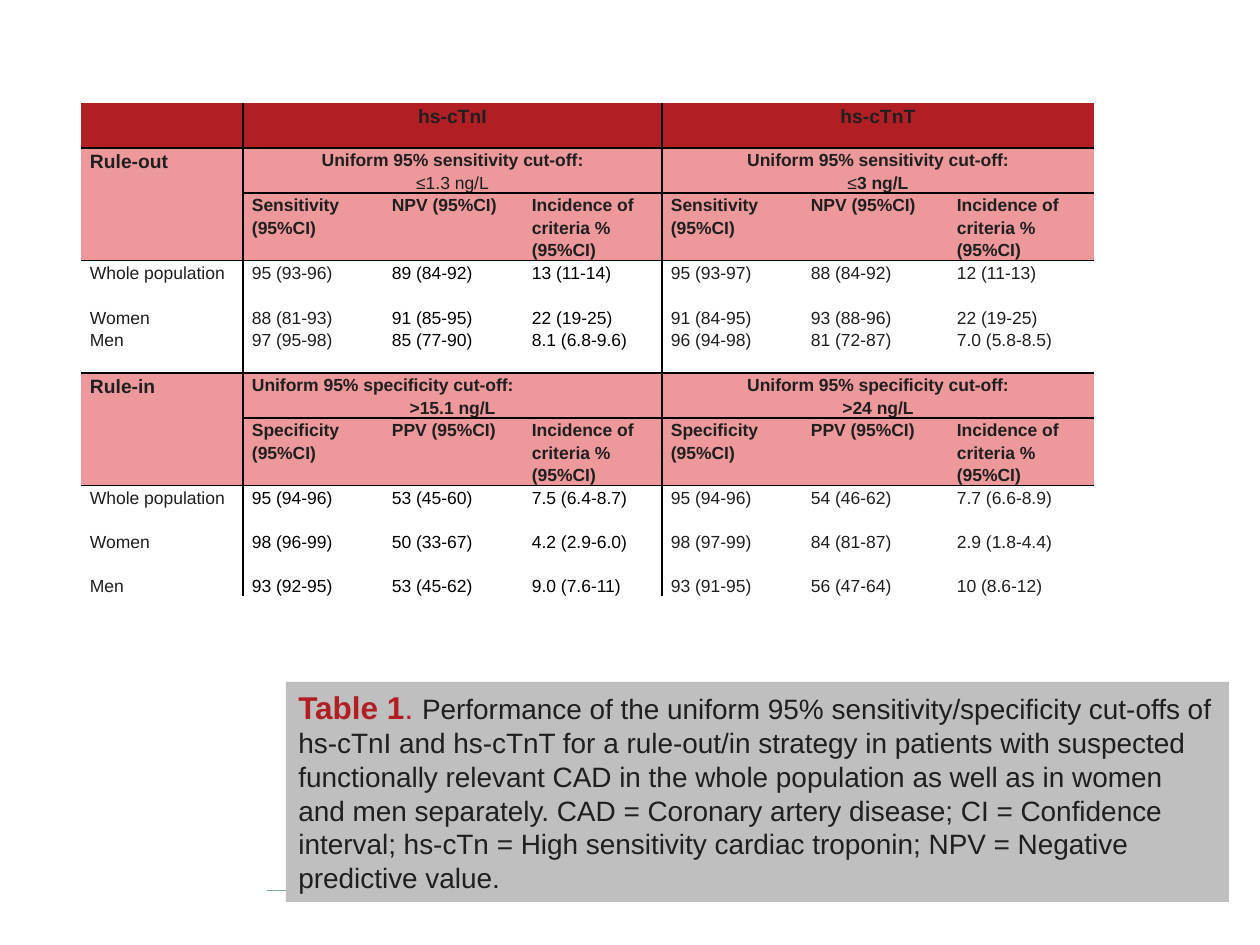
import pptx
import pptx.util
import pptx.dml.color
import pptx.enum.shapes
import pptx.enum.text
import pptx.oxml
import pptx.oxml.ns

PX = 914400 / 126
FONT = "Arial"
COLORS = {"red": "B11F24", "pink": "ED989B", "gray": "BFBFBF", "teal": "81ADA8",
          "ink": "1F1F1F", "black": "000000"}
COLS = [162, 140, 140, 139, 140, 146, 146]
ROWS = [45, 45, 67, 45, 22, 45, 45, 67, 44, 44, 23]
HEADER_ROWS = (1, 2, 6, 7)
RULED_TOPS = (1, 2, 3, 6, 7, 8)
GROUP_STARTS = (1, 4)
LEFT = pptx.enum.text.PP_ALIGN.LEFT
CENTER = pptx.enum.text.PP_ALIGN.CENTER

BLOCKS = [
    {"row": 1, "name": "Rule-out", "measure": "Sensitivity", "value": "NPV", "black": (2, 3),
     "cutoffs": [
         [("Uniform 95% sensitivity cut-off:", CENTER, True), ("≤1.3 ng/L", CENTER, False)],
         [("Uniform 95% sensitivity cut-off:", CENTER, True), ("≤|3 ng/L", CENTER, True)]],
     "rows": [
         ["Whole population", "95 (93-96)", "89 (84-92)", "13 (11-14)", "95 (93-97)", "88 (84-92)", "12 (11-13)"],
         ["Women", "88 (81-93)", "91 (85-95)", "22 (19-25)", "91 (84-95)", "93 (88-96)", "22 (19-25)"],
         ["Men", "97 (95-98)", "85 (77-90)", "8.1 (6.8-9.6)", "96 (94-98)", "81 (72-87)", "7.0 (5.8-8.5)"]]},
    {"row": 6, "name": "Rule-in", "measure": "Specificity", "value": "PPV", "black": (1, 2, 3),
     "cutoffs": [
         [("Uniform 95% specificity cut-off:", LEFT, True), (">15.1 ng/L", CENTER, True)],
         [("Uniform 95% specificity cut-off:", CENTER, True), (">24 ng/L", CENTER, True)]],
     "rows": [
         ["Whole population", "95 (94-96)", "53 (45-60)", "7.5 (6.4-8.7)", "95 (94-96)", "54 (46-62)", "7.7 (6.6-8.9)"],
         ["Women", "98 (96-99)", "50 (33-67)", "4.2 (2.9-6.0)", "98 (97-99)", "84 (81-87)", "2.9 (1.8-4.4)"],
         ["Men", "93 (92-95)", "53 (45-62)", "9.0 (7.6-11)", "93 (91-95)", "56 (47-64)", "10 (8.6-12)"]]},
]
CAPTION = ("Performance of the uniform 95% sensitivity/specificity cut-offs of hs-cTnI and hs-cTnT "
           "for a rule-out/in strategy in patients with suspected functionally relevant CAD in the "
           "whole population as well as in women and men separately. CAD = Coronary artery disease; "
           "CI = Confidence interval; hs-cTn = High sensitivity cardiac troponin; "
           "NPV = Negative predictive value.")


def px(n):
    return pptx.util.Emu(round(n * PX))


def rgb(name):
    return pptx.dml.color.RGBColor.from_string(COLORS[name])


def add_text(p, text, size=10, color="ink", bold=False):
    r = p.add_run()
    r.text = text
    r.font.name = FONT
    r.font.size = pptx.util.Pt(size)
    r.font.bold = bold
    r.font.color.rgb = rgb(color)


def write_cell(cell, lines, **fmt):
    tf = cell.text_frame
    for i, (text, align, bold) in enumerate(lines):
        p = tf.paragraphs[0] if i == 0 else tf.add_paragraph()
        p.alignment = align
        p.line_spacing = 1.15
        parts = text.split("|")
        for part in parts[:-1]:
            add_text(p, part, **fmt)
        add_text(p, parts[-1], bold=bold, **fmt)


def set_borders(cell, edges):
    tc_pr = cell._tc.get_or_add_tcPr()
    for i, edge in enumerate("LRTB"):
        paint = (f'<a:solidFill><a:srgbClr val="{COLORS["black"]}"/></a:solidFill>'
                 if edge in edges else "<a:noFill/>")
        tc_pr.insert(i, pptx.oxml.parse_xml(
            f'<a:ln{edge} {pptx.oxml.ns.nsdecls("a")} w="12700">{paint}</a:ln{edge}>'))


def cell_edges(row, col):
    def ruled(r):
        return r in RULED_TOPS and not (col == 0 and r in (2, 7))

    tests = {"L": col in GROUP_STARTS, "R": col + 1 in GROUP_STARTS,
             "T": ruled(row), "B": ruled(row + 1)}
    return [edge for edge, on in tests.items() if on]


def format_cell(cell, row, col):
    cell.margin_left = cell.margin_right = px(9)
    cell.margin_top = cell.margin_bottom = 0
    if row == 0 or row in HEADER_ROWS:
        cell.fill.solid()
        cell.fill.fore_color.rgb = rgb("red" if row == 0 else "pink")
    else:
        cell.fill.background()
    set_borders(cell, cell_edges(row, col))


def fill_block(table, block):
    top = block["row"]
    table.cell(top, 0).merge(table.cell(top + 1, 0))
    write_cell(table.cell(top, 0), [(block["name"], LEFT, True)], size=11)
    heads = [f"{block['measure']} (95%CI)", f"{block['value']} (95%CI)",
             "Incidence of criteria % (95%CI)"]
    for start, lines in zip(GROUP_STARTS, block["cutoffs"]):
        table.cell(top, start).merge(table.cell(top, start + 2))
        write_cell(table.cell(top, start), lines)
        for i, head in enumerate(heads):
            write_cell(table.cell(top + 1, start + i), [(head, LEFT, True)])
    for row, values in enumerate(block["rows"], top + 2):
        for col, value in enumerate(values):
            color = "black" if col in block["black"] else "ink"
            write_cell(table.cell(row, col), [(value, LEFT, False)], color=color)


def add_results_table(s):
    table = s.shapes.add_table(len(ROWS), len(COLS), px(81), px(103),
                               px(sum(COLS)), px(sum(ROWS))).table
    table.first_row = table.horz_banding = False
    for column, width in zip(table.columns, COLS):
        column.width = px(width)
    for row, height in zip(table.rows, ROWS):
        row.height = px(height)
    for row in range(len(ROWS)):
        for col in range(len(COLS)):
            format_cell(table.cell(row, col), row, col)
    for start, name in zip(GROUP_STARTS, ("hs-cTnI", "hs-cTnT")):
        table.cell(0, start).merge(table.cell(0, start + 2))
        write_cell(table.cell(0, start), [(name, CENTER, True)], size=11)
    for block in BLOCKS:
        fill_block(table, block)


def add_footer_line(s):
    line = s.shapes.add_connector(pptx.enum.shapes.MSO_CONNECTOR.STRAIGHT,
                                  px(267), px(890), px(1100), px(890))
    line.line.color.rgb = rgb("teal")
    line.line.width = pptx.util.Pt(0.5)
    line._element.spPr.append(pptx.oxml.parse_xml(
        f'<a:effectLst {pptx.oxml.ns.nsdecls("a")}/>'))


def add_caption(s):
    sp = s.shapes.add_shape(pptx.enum.shapes.MSO_SHAPE.RECTANGLE,
                            px(286), px(682), px(943), px(220))
    sp.shadow.inherit = False
    sp.fill.solid()
    sp.fill.fore_color.rgb = rgb("gray")
    sp.line.fill.background()
    tf = sp.text_frame
    tf.word_wrap = True
    tf.auto_size = pptx.enum.text.MSO_AUTO_SIZE.SHAPE_TO_FIT_TEXT
    tf.vertical_anchor = pptx.enum.text.MSO_ANCHOR.TOP
    p = tf.paragraphs[0]
    p.alignment = LEFT
    add_text(p, "Table 1", size=18, color="red", bold=True)
    add_text(p, ". ", size=18, color="red")
    add_text(p, CAPTION, size=16)


def main():
    prs = pptx.Presentation()
    prs.slide_width, prs.slide_height = px(1260), px(945)
    s = prs.slides.add_slide(prs.slide_layouts[6])
    add_footer_line(s)
    add_results_table(s)
    add_caption(s)
    prs.save("out.pptx")


if __name__ == "__main__":
    main()
